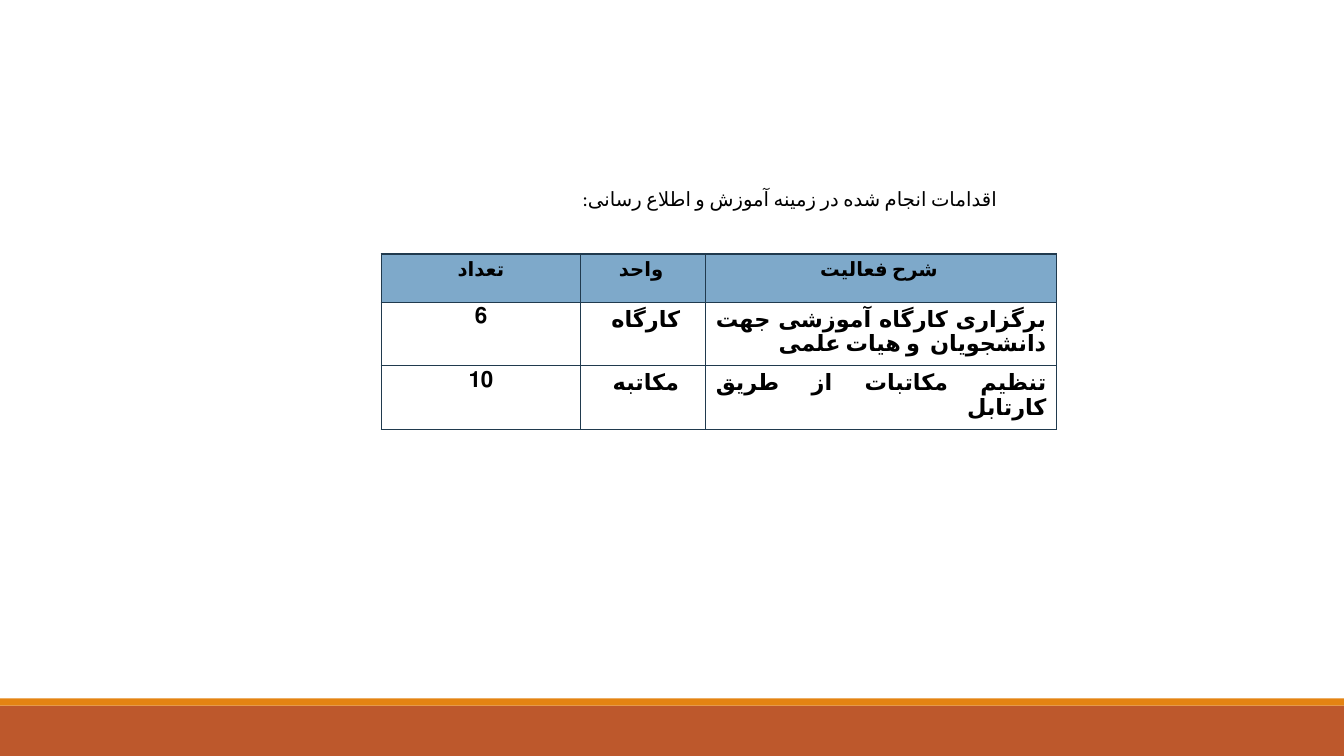
from lxml import etree
from pptx import Presentation
from pptx.dml.color import RGBColor
from pptx.enum.lang import MSO_LANGUAGE_ID as Language
from pptx.enum.shapes import MSO_SHAPE as Shape
from pptx.enum.text import PP_ALIGN as Align
from pptx.oxml.ns import qn
from pptx.util import Inches, Pt

FONT = "Calibri"
INK, BORDER, HEADER_FILL = "000000", "203A4E", "7EA9CA"
HEADINGS = ["تعداد", "واحد ", "شرح فعالیت "]
ACTIVITIES = [
    ["6", "کارگاه ", "برگزاری کارگاه آموزشی جهت دانشجویان  و هیات علمی "],
    ["10", "مکاتبه ", "تنظیم مکاتبات از طریق کارتابل "],
]
COLUMN_WIDTHS = [1.98, 1.24, 3.48]
ROW_HEIGHTS = [0.48, 0.63, 0.63]


def color(hex_string):
    return RGBColor.from_string(hex_string)


def write(frame, text, size, align, bold=False, rtl=True, line=0.9, after=0):
    frame.word_wrap = True
    paragraph = frame.paragraphs[0]
    paragraph.alignment = align
    paragraph.line_spacing = line
    paragraph.space_after = Pt(after)
    if rtl:
        paragraph._p.get_or_add_pPr().set("rtl", "1")
    run = paragraph.add_run()
    run.text = text
    run.font.name = FONT
    run.font.size = Pt(size)
    run.font.bold = bold
    run.font.color.rgb = color(INK)
    run.font.language_id = Language.FARSI
    if not text.isdigit():
        etree.SubElement(run._r.get_or_add_rPr(), qn("a:cs"), typeface=FONT)


def outline_cell(cell):
    properties = cell._tc.get_or_add_tcPr()
    for position, side in enumerate(("a:lnL", "a:lnR", "a:lnT", "a:lnB")):
        edge = etree.Element(qn(side), w=str(Pt(1)))
        fill = etree.SubElement(edge, qn("a:solidFill"))
        etree.SubElement(fill, qn("a:srgbClr"), val=BORDER)
        properties.insert(position, edge)


def add_band(slide, left, top, width, height, fill):
    band = slide.shapes.add_shape(Shape.RECTANGLE, Inches(left), Inches(top),
                                  Inches(width), Inches(height))
    band.shadow.inherit = False
    band.fill.solid()
    band.fill.fore_color.rgb = color(fill)
    band.line.fill.background()


def add_footer(slide, left, top, width, height):
    """Draw a thin orange stripe above a wide rust band."""
    stripe = 0.07
    add_band(slide, left, top + stripe, width, height - stripe, "BD582C")
    add_band(slide, left, top, width, stripe, "E48312")


def add_heading(slide, left, top, width, height):
    heading = slide.shapes.add_textbox(Inches(left), Inches(top),
                                       Inches(width), Inches(height))
    write(heading.text_frame, "اقدامات انجام شده در زمینه آموزش و اطلاع رسانی:",
          14, Align.RIGHT, line=1.07, after=8)


def add_activity_table(slide, left, top, width, height):
    rows = [HEADINGS] + ACTIVITIES
    table = slide.shapes.add_table(len(rows), len(HEADINGS), Inches(left), Inches(top),
                                   Inches(width), Inches(height)).table
    for column, column_width in zip(table.columns, COLUMN_WIDTHS):
        column.width = Inches(column_width)
    for row, row_height in zip(table.rows, ROW_HEIGHTS):
        row.height = Inches(row_height)
    for r, texts in enumerate(rows):
        is_header = r == 0
        for c, text in enumerate(texts):
            cell = table.cell(r, c)
            cell.margin_top = cell.margin_bottom = Inches(0.05)
            if is_header:
                cell.fill.solid()
                cell.fill.fore_color.rgb = color(HEADER_FILL)
            else:
                cell.fill.background()
            outline_cell(cell)
            is_description = c == len(texts) - 1 and not is_header
            write(cell.text_frame, text, 14 if is_header else 16,
                  Align.JUSTIFY if is_description else Align.CENTER,
                  bold=True, rtl=not is_header)


def main():
    deck = Presentation()
    deck.slide_width, deck.slide_height = Inches(13.33), Inches(7.5)
    slide = deck.slides.add_slide(deck.slide_layouts[6])
    add_footer(slide, 0, 6.93, 13.33, 0.57)
    add_heading(slide, 3.33, 1.79, 6.66, 0.35)
    add_activity_table(slide, 3.78, 2.52, sum(COLUMN_WIDTHS), sum(ROW_HEIGHTS))
    deck.save("out.pptx")


if __name__ == "__main__":
    main()
